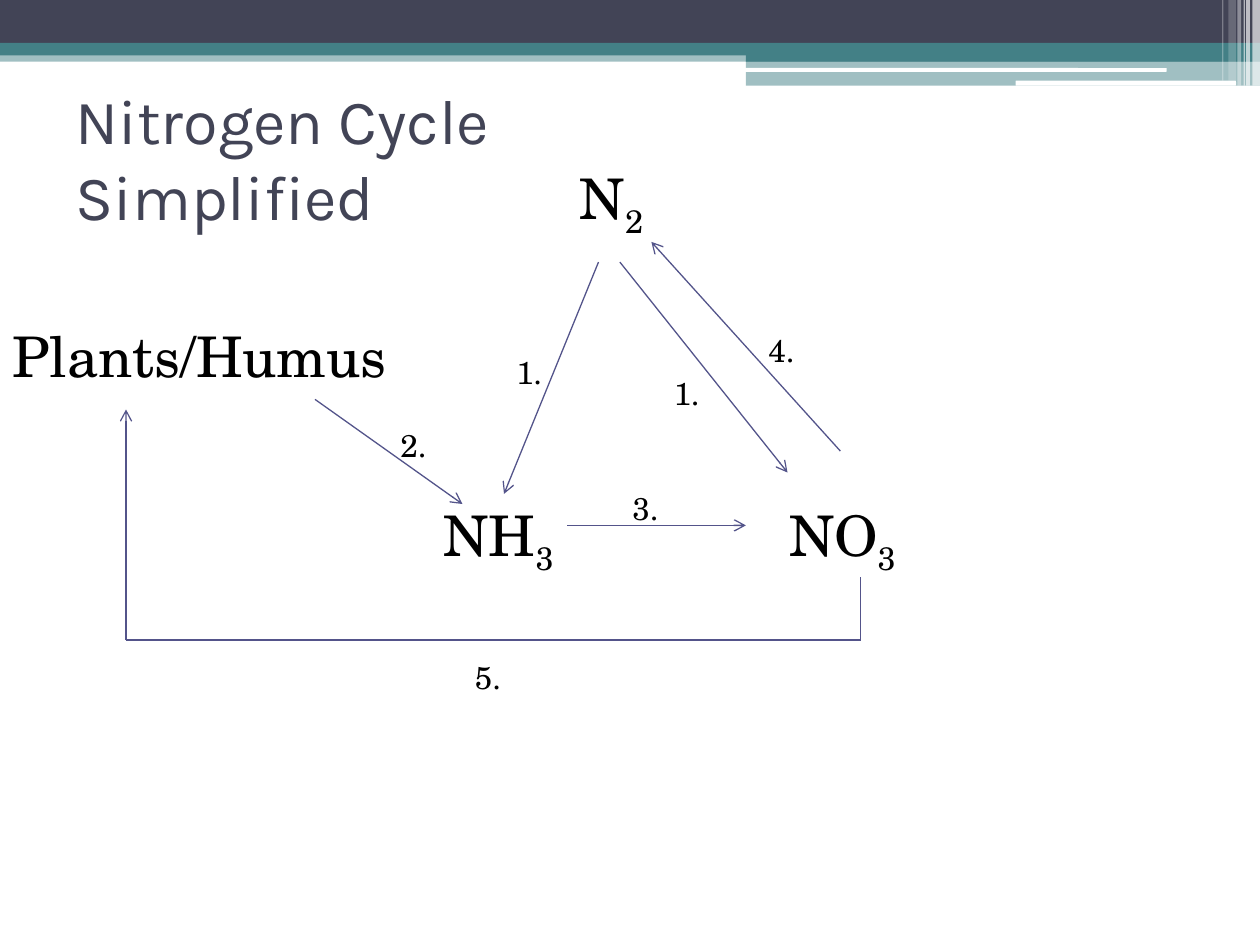
from dataclasses import dataclass

from lxml import etree
from pptx import Presentation
from pptx.dml.color import RGBColor
from pptx.enum import shapes, text
from pptx.oxml import ns
from pptx.util import Inches, Pt

COLORS = {
    "navy": "424456",
    "teal": "438086",
    "white": "FFFFFF",
    "arrow": "53548A",
    "black": "000000",
}
TITLE_FONT = "Karla"
BODY_FONT = "TeX Gyre Schola"


@dataclass
class Band:
    left: float
    top: float
    width: float
    height: float
    color: str
    opacity: int = 100
    rounded: bool = False


@dataclass
class Label:
    left: float
    top: float
    width: float
    words: str
    subscript: str = ""
    size: int = 32
    height: float = 0.64


@dataclass
class Line:
    start: tuple[float, float]
    end: tuple[float, float]
    arrow: bool = True


def rgb(name: str) -> RGBColor:
    return RGBColor.from_string(COLORS[name])


def draw_band(slide, band: Band) -> None:
    kind = shapes.MSO_SHAPE.ROUNDED_RECTANGLE if band.rounded else shapes.MSO_SHAPE.RECTANGLE
    shape = slide.shapes.add_shape(
        kind, Inches(band.left), Inches(band.top), Inches(band.width), Inches(band.height))
    shape.shadow.inherit = False
    shape.fill.solid()
    shape.fill.fore_color.rgb = rgb(band.color)
    shape.line.fill.background()
    if band.opacity < 100:
        color = shape.fill._xPr.find(".//" + ns.qn("a:srgbClr"))
        etree.SubElement(color, ns.qn("a:alpha")).set("val", str(band.opacity * 1000))


def add_run(paragraph, words: str, font: str, size: int, color: str):
    run = paragraph.add_run()
    run.text = words
    run.font.name = font
    run.font.size = Pt(size)
    run.font.color.rgb = rgb(color)
    return run


def add_text_box(slide, left: float, top: float, width: float, height: float):
    box = slide.shapes.add_textbox(Inches(left), Inches(top), Inches(width), Inches(height))
    box.text_frame.word_wrap = True
    return box.text_frame


def draw_title(slide) -> None:
    frame = add_text_box(slide, 0.5, 0.75, 7.68, 1)
    frame.vertical_anchor = text.MSO_ANCHOR.MIDDLE
    paragraph = frame.paragraphs[0]
    add_run(paragraph, "Nitrogen Cycle ", TITLE_FONT, 36, "navy")
    paragraph.add_line_break()
    add_run(paragraph, "Simplified", TITLE_FONT, 36, "navy")


def draw_label(slide, label: Label) -> None:
    frame = add_text_box(slide, label.left, label.top, label.width, label.height)
    frame.auto_size = text.MSO_AUTO_SIZE.SHAPE_TO_FIT_TEXT
    paragraph = frame.paragraphs[0]
    add_run(paragraph, label.words, BODY_FONT, label.size, "black")
    if label.subscript:
        run = add_run(paragraph, label.subscript, BODY_FONT, label.size, "black")
        run.font._element.set("baseline", "-25000")


def draw_line(slide, line: Line) -> None:
    connector = slide.shapes.add_connector(
        shapes.MSO_CONNECTOR.STRAIGHT, *map(Inches, line.start + line.end))
    connector.line.color.rgb = rgb("arrow")
    connector.line.width = Pt(0.75)
    if line.arrow:
        outline = connector.line._get_or_add_ln()
        etree.SubElement(outline, ns.qn("a:tailEnd")).set("type", "arrow")
    etree.SubElement(connector._element.spPr, ns.qn("a:effectLst"))


BANDS = [
    # Header bars
    Band(0, 0.4, 10, 0.09, "teal", 50),
    Band(0, 0, 10, 0.34, "navy"),
    Band(0, 0.34, 10, 0.1, "teal"),
    Band(5.92, 0.39, 4.08, 0.1, "teal"),
    Band(5.92, 0.48, 4.08, 0.2, "teal", 50),
    Band(5.91, 0.54, 3.35, 0.03, "white", rounded=True),
    Band(8.06, 0.64, 1.75, 0.04, "white", rounded=True),
    # Pale stripes at the right edge
    Band(9.94, 0, 0.06, 0.68, "white", 65),
    Band(9.89, 0, 0.03, 0.68, "white", 65),
    Band(9.87, 0, 0.01, 0.68, "white", 60),
    Band(9.82, 0, 0.03, 0.68, "white", 40),
    Band(9.75, 0, 0.06, 0.64, "white", 20),
    Band(9.7, 0, 0.01, 0.64, "white", 30),
]

COMPOUNDS = [
    Label(4.5, 1.25, 0.83, "N", "2"),
    Label(3.42, 3.92, 1.17, "NH", "3"),
    Label(6.17, 3.92, 1.42, "NO", "3"),
    Label(0, 2.5, 3.58, "Plants/Humus"),
]

LINES = [
    Line((2.5, 3.17), (3.67, 4)),      # plants to ammonia
    Line((4.5, 4.17), (5.92, 4.17)),   # ammonia to nitrate
    Line((4.75, 2.08), (4, 3.92)),     # nitrogen to ammonia
    Line((6.67, 3.58), (5.17, 1.92)),  # nitrate to nitrogen
    Line((1, 5.08), (1, 3.25)),        # nitrate back to plants, three parts
    Line((1, 5.08), (6.83, 5.08), arrow=False),
    Line((6.83, 4.58), (6.83, 5.08), arrow=False),
    Line((4.92, 2.08), (6.25, 3.75)),  # nitrogen to nitrate
]

STEPS = [
    (3.67, 5.17, "5."),
    (6, 2.58, "4."),
    (3.08, 3.33, "2."),
    (4.92, 3.83, "3."),
    (5.25, 2.92, "1."),
    (4, 2.75, "1."),
]


def main() -> None:
    presentation = Presentation()
    presentation.slide_width = Inches(10)
    presentation.slide_height = Inches(7.5)
    slide = presentation.slides.add_slide(presentation.slide_layouts[6])

    # Header and title
    for band in BANDS:
        draw_band(slide, band)
    draw_title(slide)

    # Cycle diagram
    for compound in COMPOUNDS:
        draw_label(slide, compound)
    for line in LINES:
        draw_line(slide, line)
    for left, top, number in STEPS:
        draw_label(slide, Label(left, top, 0.58, number, size=18, height=0.4))

    presentation.save("out.pptx")


if __name__ == "__main__":
    main()
